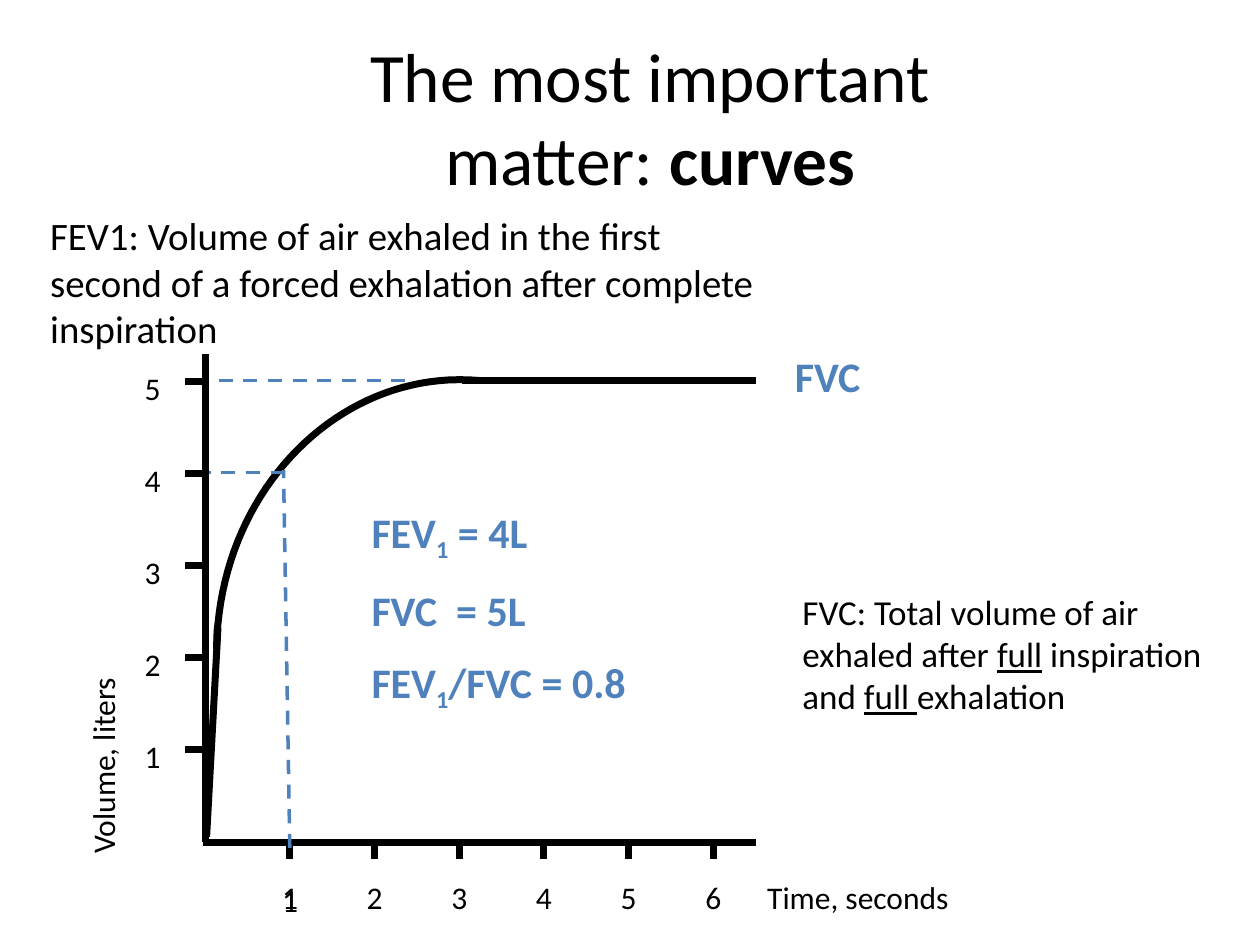
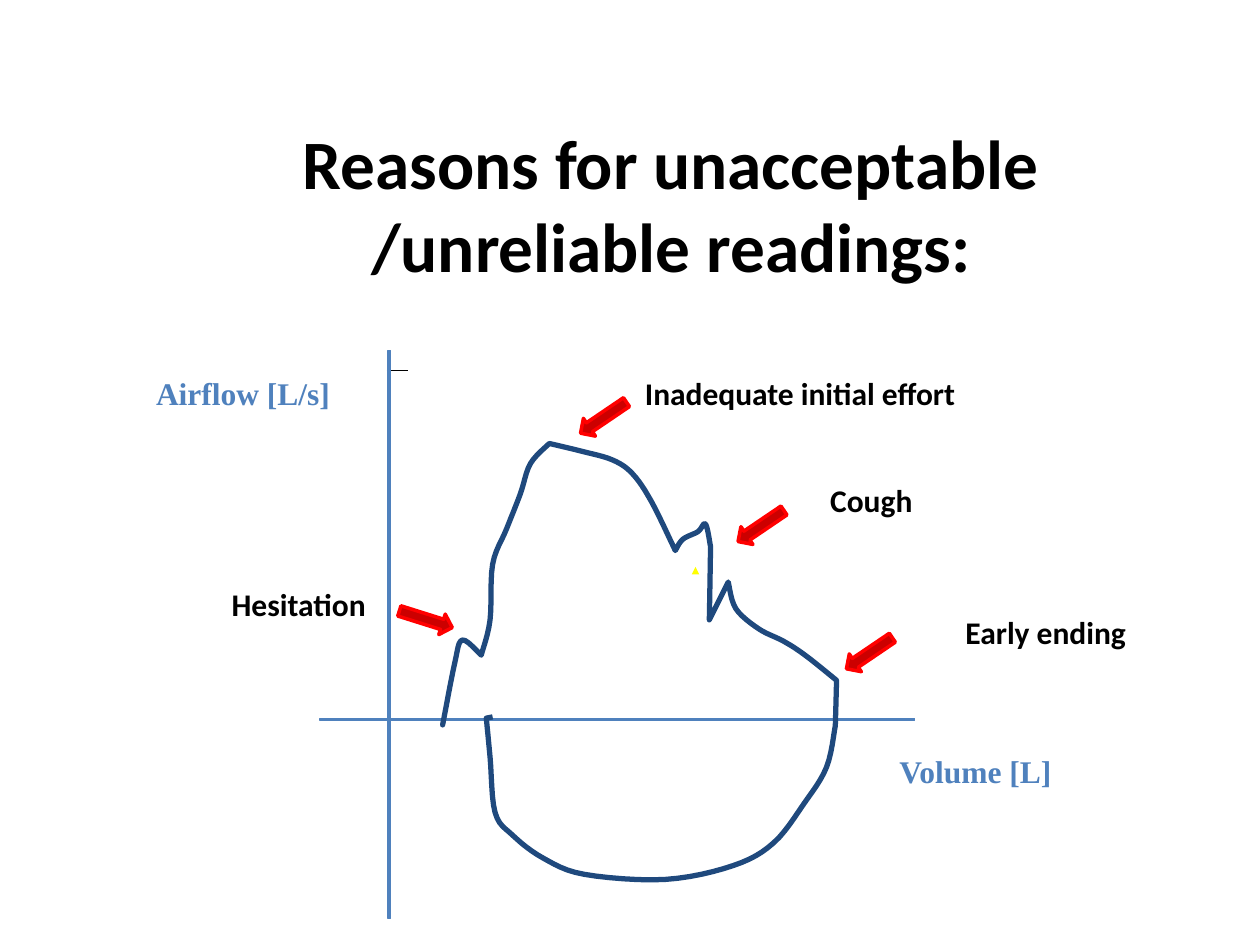
from lxml import etree
from pptx import Presentation
from pptx.dml.color import RGBColor
from pptx.enum.dml import MSO_LINE
from pptx.enum.shapes import MSO_CONNECTOR, MSO_SHAPE
from pptx.enum.text import MSO_ANCHOR, MSO_AUTO_SIZE, PP_ALIGN
from pptx.oxml.ns import qn
from pptx.util import Inches, Pt

STRAIGHT = MSO_CONNECTOR.STRAIGHT
ARROW, RECT, PEAK = MSO_SHAPE.RIGHT_ARROW, MSO_SHAPE.RECTANGLE, MSO_SHAPE.ISOSCELES_TRIANGLE
DASH = MSO_LINE.DASH
MIDDLE, CENTER, LEFT = MSO_ANCHOR.MIDDLE, PP_ALIGN.CENTER, PP_ALIGN.LEFT
GROW = MSO_AUTO_SIZE.SHAPE_TO_FIT_TEXT

COLORS = {"ink": "000000", "blue": "4F81BD", "navy": "1F497D",
          "red": "CC0000", "edge": "FF0000", "yellow": "FFFF00"}
SANS, SERIF = "Calibri", "Times New Roman"
TITLE_SIZE = 39.6

# Knots of the breath loop by phase. Each phase is one smooth curve that
# starts at the end of the phase before, so corners fall between phases.
PHASES = {
    "false start": [(3.52, 5.72), (3.61, 5.26), (3.67, 5.08), (3.82, 5.2)],
    "rise": [(3.89, 4.92), (3.91, 4.48), (4.02, 4.2), (4.13, 3.92),
             (4.21, 3.68), (4.36, 3.52)],
    "weak peak": [(4.61, 3.58), (4.86, 3.65), (5.02, 3.76), (5.17, 3.98),
                  (5.36, 4.37)],
    "cough": [(5.42, 4.28), (5.54, 4.22), (5.6, 4.16), (5.64, 4.34)],
    "drop": [(5.63, 4.92)],
    "rebound": [(5.72, 4.74), (5.78, 4.62)],
    "decline": [(5.84, 4.83), (6.02, 4.99), (6.22, 5.09), (6.39, 5.2),
                (6.64, 5.4)],
    "early end": [(6.63, 5.76)],
    "inspiration": [(6.56, 6.09), (6.38, 6.38), (6.14, 6.69), (5.82, 6.87),
                    (5.28, 6.98), (4.64, 6.94), (4.31, 6.81), (4.07, 6.63),
                    (3.93, 6.45), (3.89, 6.01), (3.86, 5.7)],
    "finish": [(3.91, 5.69)],
}


def rgb(name):
    return RGBColor.from_string(COLORS[name])


def box(at):
    return [Inches(n) for n in at]


def text(slide, at, paras, size, color="ink", font=SANS, bold=False,
         wrap=False, align=LEFT, gap=0):
    """Add a text box; each paragraph is a list of (words, style) runs.

    Style letters: b bold, u underline, s subscript.
    """
    shape = slide.shapes.add_textbox(*box(at))
    frame = shape.text_frame
    frame.word_wrap = wrap
    if not wrap:
        frame.auto_size = GROW
    for i, runs in enumerate(paras):
        para = frame.paragraphs[0] if i == 0 else frame.add_paragraph()
        para.alignment = align
        if i and gap:
            para.space_before = Pt(gap)
        for words, style in runs:
            run = para.add_run()
            run.text = words
            run.font.name, run.font.size = font, Pt(size)
            run.font.color.rgb = rgb(color)
            run.font.bold = bold or "b" in style
            run.font.underline = "u" in style
            if "s" in style:
                run.font._element.set("baseline", "-25000")
    return shape


def title(slide, at, runs):
    shape = text(slide, at, [runs], TITLE_SIZE, wrap=True, align=CENTER)
    shape.text_frame.vertical_anchor = MIDDLE


def label(slide, x, y, wide, words, high=0.4, size=18, **look):
    return text(slide, (x, y, wide, high), [[(words, "")]], size, **look)


def line(slide, start, end, color="ink", width=4, dash=None):
    item = slide.shapes.add_connector(STRAIGHT, *box(start + end))
    item.line.color.rgb = rgb(color)
    item.line.width = Pt(width)
    if dash:
        item.line.dash_style = dash
    etree.SubElement(item._element.spPr, qn("a:effectLst"))


def trace(slide, points, color, width):
    """Draw an open, unfilled outline through the points."""
    first, *rest = [box(p) for p in points]
    pen = slide.shapes.build_freeform(*first)
    pen.add_line_segments(rest, close=False)
    shape = pen.convert_to_shape()
    shape.shadow.inherit = False
    shape.fill.background()
    shape.line.color.rgb = rgb(color)
    shape.line.width = Pt(width)


def bend(a, b, c, d, steps):
    """Points along a cubic curve, without its start."""
    points = []
    for i in range(1, steps + 1):
        t = i / steps
        u = 1 - t
        mix = (u ** 3, 3 * u * u * t, 3 * u * t * t, t ** 3)
        points.append(tuple(sum(m * p[k] for m, p in zip(mix, (a, b, c, d)))
                            for k in (0, 1)))
    return points


def shift(point, start, end):
    """Move a point by a sixth of the way from start to end."""
    return tuple(p + (e - s) / 6 for p, s, e in zip(point, start, end))


def smooth(knots, steps=6):
    """Points of a curve through all knots, without the first.

    At each knot the curve runs parallel to the line between its neighbours.
    """
    ends = [knots[0], *knots, knots[-1]]
    points = []
    for prior, a, d, after in zip(ends, ends[1:], ends[2:], ends[3:]):
        points += bend(a, shift(a, prior, d), shift(d, after, a), d, steps)
    return points


def loop(phases):
    """Join the phases into one outline."""
    points = [phases["false start"][0]]
    for knots in phases.values():
        points += smooth([points[-1], *knots])
    return points


def solid(slide, kind, at, fill, edge=None, width=0.75, turn=0):
    shape = slide.shapes.add_shape(kind, *box(at))
    shape.shadow.inherit = False
    shape.fill.solid()
    shape.fill.fore_color.rgb = rgb(fill)
    if edge:
        shape.line.color.rgb = rgb(edge)
        shape.line.width = Pt(width)
    else:
        shape.line.fill.background()
    shape.rotation = turn


def time_axis(slide):
    line(slide, (1.61, 6.69), (6, 6.69))
    first, last, count = 2.3, 5.66, 6
    for i in range(count):
        x = first + i * (last - first) / (count - 1)
        line(slide, (x, 6.67), (x, 6.82))
        label(slide, x - 0.16, 6.92, 0.34, str(i + 1))
    label(slide, first - 0.16, 6.94, 0.34, "1")
    label(slide, 5.99, 6.92, 2.22, "Time, seconds", 0.51)


def volume_axis(slide):
    line(slide, (1.63, 6.68), (1.63, 2.81))
    for i in range(5):
        y = 5.95 - 0.73 * i
        line(slide, (1.61, y), (1.47, y))
        label(slide, 1.05, y - 0.15, 0.34, str(i + 1))
    label(slide, -0.17, 5.58, 2.08, "Volume, liters", 0.51).rotation = 270


def exhaled(slide):
    """Exhaled volume: steep start, bend, then flat at FVC."""
    low, knee, top = (1.72, 5.15), (1.73, 4.95), (3.8, 3.02)
    line(slide, (1.64, 6.64), (1.73, 4.98))
    line(slide, (3.67, 3.02), (6, 3.02))
    trace(slide, [low, *bend(low, (1.72, 5.08), (1.72, 5.01), knee, 4),
                  *bend(knee, (1.84, 3.79), (2.76, 2.93), top, 40)], "ink", 4)


def guides(slide):
    """Dashed lines that mark FEV1 and FVC."""
    for start, end in (((2.3, 6.73), (2.25, 3.73)),
                       ((2.26, 3.75), (1.6, 3.75)),
                       ((1.54, 3.02), (3.29, 3.02))):
        line(slide, start, end, "blue", 2, DASH)


def volume(slide):
    """Volume against time, with the two readings marked."""
    title(slide, (2.17, 0.3, 5.98, 1.25),
          [("The most important matter: ", ""), ("curves", "b")])
    text(slide, (0.3, 1.63, 5.91, 1.09),
         [[("FEV1: Volume of air exhaled in the first second of a forced "
            "exhalation after complete inspiration", "")]], 22.2, wrap=True)
    text(slide, (6.27, 4.64, 3.42, 1.15),
         [[("FVC: Total volume of air exhaled after ", ""), ("full", "u"),
           (" inspiration and ", ""), ("full ", "u"), ("exhalation", "")]],
         20, wrap=True)
    for part in (time_axis, exhaled, guides, volume_axis):
        part(slide)
    label(slide, 6.21, 2.73, 0.92, "FVC", 0.51, 24, color="blue", bold=True)
    text(slide, (2.85, 3.97, 3.42, 1.72),
         [[("FEV", ""), ("1", "s"), (" = 4L", "")],
          [("FVC  = 5L", "")],
          [("FEV", ""), ("1", "s"), ("/FVC = 0.8", "")]],
         24, "blue", bold=True, wrap=True, gap=12)


def faults(slide):
    """Airflow against volume, with an arrow at each fault."""
    title(slide, (1.94, 0.99, 6.77, 1.25),
          [("Reasons for unacceptable /unreliable readings:", "b")])
    line(slide, (3.07, 2.94), (3.24, 2.94), width=0.75)
    for axis in ((3.08, 2.78, 0.02, 4.51), (2.54, 5.7, 4.72, 0.02)):
        solid(slide, RECT, axis, "blue", "blue")
    solid(slide, PEAK, (5.49, 4.5, 0.06, 0.06), "yellow")
    trace(slide, loop(PHASES), "navy", 3)

    for x, y, wide, words in ((1.14, 2.92, 1.66, "Airflow [L/s]"),
                              (7.04, 5.92, 1.48, "Volume [L]")):
        label(slide, x, y, wide, words, color="blue", font=SERIF, bold=True)
    left, right = 145.9, 17.5
    for words, x, y, wide, align, tip_x, tip_y, turn in (
            ("Inadequate initial effort", 5.02, 2.92, 3.17, LEFT, 4.57, 3.23, left),
            ("Cough", 6.49, 3.77, 1.02, LEFT, 5.82, 4.09, left),
            ("Early ending", 7.4, 4.82, 1.8, CENTER, 6.68, 5.1, left),
            ("Hesitation", 1.74, 4.59, 1.47, LEFT, 3.16, 4.83, right)):
        label(slide, x, y, wide, words, bold=True, align=align)
        solid(slide, ARROW, (tip_x, tip_y, 0.44, 0.17), "red", "edge", 2, turn)


def main():
    deck = Presentation()
    deck.slide_width, deck.slide_height = Inches(10), Inches(7.5)
    blank = deck.slide_layouts[6]
    for build in (volume, faults):
        build(deck.slides.add_slide(blank))
    deck.save("out.pptx")


if __name__ == "__main__":
    main()
